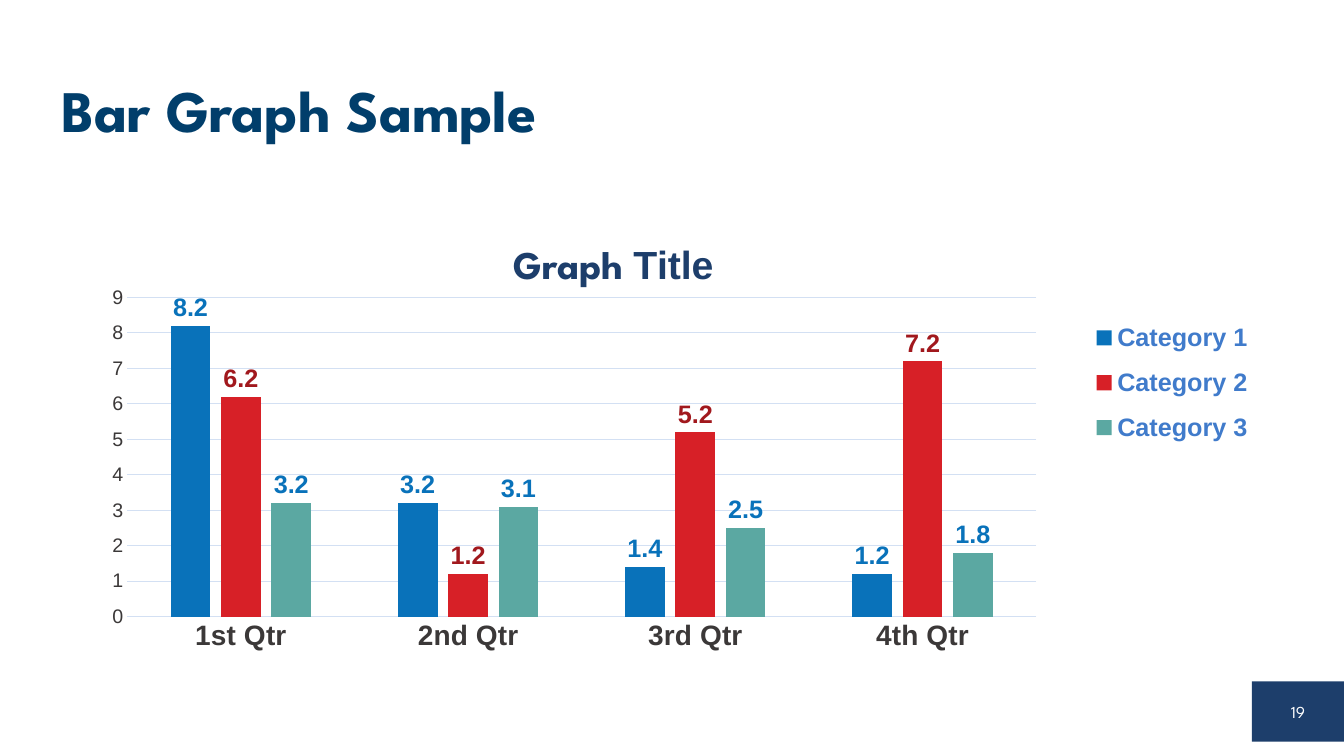
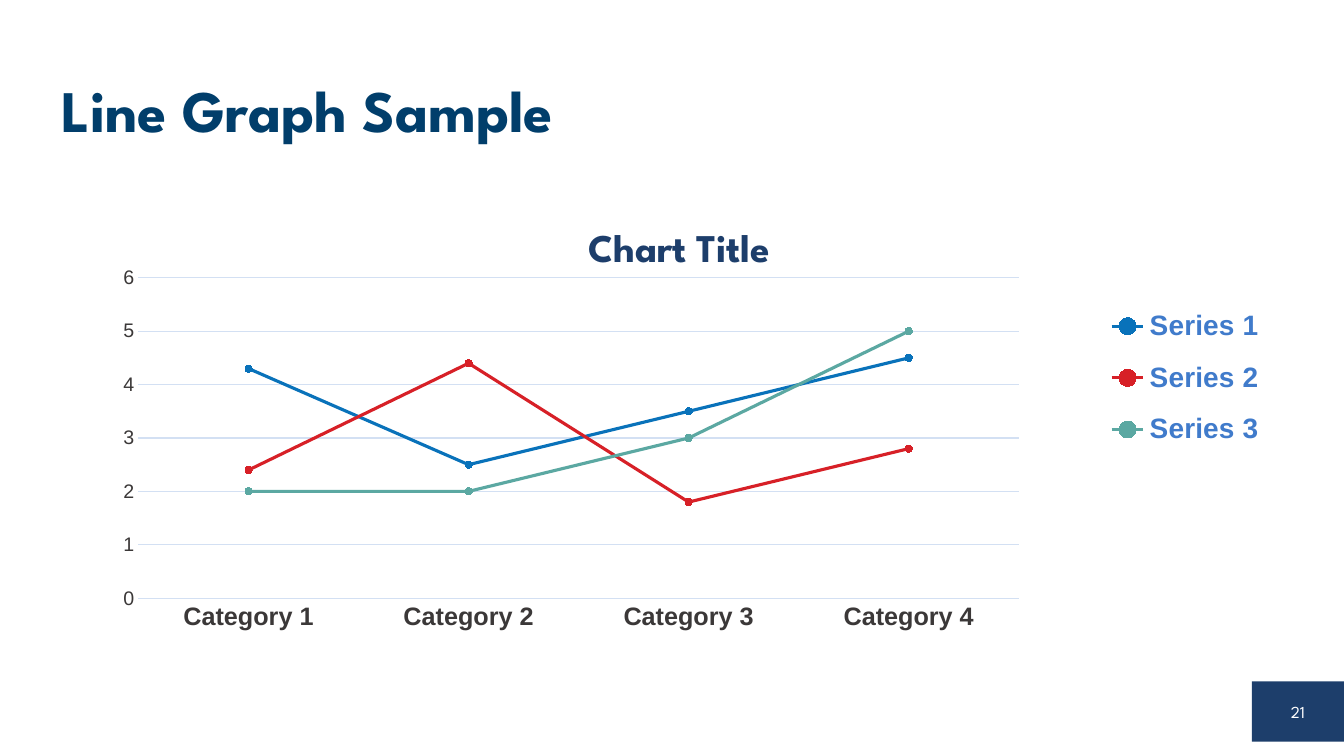
from lxml import etree
from pptx import Presentation
from pptx import util as u
from pptx.chart.data import CategoryChartData
from pptx.dml.color import RGBColor
from pptx.enum import chart as charts, shapes, text
from pptx.oxml.ns import qn

HEADING_FONT, CHART_FONT = "League Spartan", "Arial"
TITLE_BLUE, NAVY, LEGEND_BLUE = "013E6B", "1D3E6B", "407BCB"
GREY, GRID, WHITE = "3B3838", "D3E0F3", "FFFFFF"
BLUE, RED, DARK_RED, TEAL = "0972BA", "D72027", "A1181D", "5BA8A2"
SERIES_COLORS = (BLUE, RED, TEAL)
LABEL_COLORS = (BLUE, DARK_RED, BLUE)


def color(value):
    return RGBColor.from_string(value)


def set_font(font, size, fill, bold=False, name=CHART_FONT):
    font.size, font.bold, font.name = u.Pt(size), bold, name
    font.color.rgb = color(fill)


def write(paragraph, content, align=None, line_spacing=None, **style):
    """Add one formatted run to a paragraph."""
    if align is not None:
        paragraph.alignment = align
    if line_spacing:
        paragraph.line_spacing = line_spacing
    run = paragraph.add_run()
    run.text = content
    set_font(run.font, **style)


def place(element, index, x, y, w=None, h=None, inner=False):
    """Give a chart part a fixed place, in fractions of the chart."""
    for old in element.findall(qn("c:layout")):
        element.remove(old)
    layout = etree.Element(qn("c:layout"))
    manual = etree.SubElement(layout, qn("c:manualLayout"))
    values = [("layoutTarget", "inner" if inner else None),
              ("xMode", "edge"), ("yMode", "edge"),
              ("x", x), ("y", y), ("w", w), ("h", h)]
    for tag, value in values:
        if value is not None:
            etree.SubElement(manual, qn(f"c:{tag}")).set("val", str(value))
    element.insert(index, layout)


class Deck:
    """House style and the current slide."""

    def __init__(self):
        self.presentation = Presentation()
        self.presentation.slide_width = u.Cm(33.87)
        self.presentation.slide_height = u.Cm(19.05)
        self.slide = None

    def new_slide(self, title, number):
        layout = self.presentation.slide_layouts[6]
        self.slide = self.presentation.slides.add_slide(layout)
        self.title(title)
        self.page_number(number)

    def title(self, content):
        box = self.slide.shapes.add_textbox(
            u.Cm(1.3), u.Cm(1.02), u.Cm(31.29), u.Cm(3.68))
        frame = box.text_frame
        frame.word_wrap = True
        frame.vertical_anchor = text.MSO_ANCHOR.MIDDLE
        write(frame.paragraphs[0], content, line_spacing=0.9, size=42,
              fill=TITLE_BLUE, bold=True, name=HEADING_FONT)

    def page_number(self, number):
        shape = self.slide.shapes.add_shape(
            shapes.MSO_SHAPE.RECTANGLE,
            u.Cm(31.55), u.Cm(17.17), u.Cm(2.32), u.Cm(1.52))
        shape.shadow.inherit = False
        shape.fill.solid()
        shape.fill.fore_color.rgb = color(NAVY)
        shape.line.fill.background()
        shape.text_frame.vertical_anchor = text.MSO_ANCHOR.MIDDLE
        write(shape.text_frame.paragraphs[0], str(number),
              align=text.PP_ALIGN.CENTER, size=12, fill=WHITE,
              name=HEADING_FONT)

    def chart(self, kind, categories, series, title_runs, top_value,
              category_size, legend_size, title_at, plot_at, legend_at):
        data = CategoryChartData()
        data.categories = categories
        for name, values in series.items():
            data.add_series(name, values)
        chart = self.slide.shapes.add_chart(
            kind, u.Cm(1.3), u.Cm(5.08), u.Cm(31.29), u.Cm(12.09),
            data).chart
        set_font(chart.font, 10, NAVY)

        # Title
        chart.has_title = True
        paragraph = chart.chart_title.text_frame.paragraphs[0]
        for content, font in title_runs:
            write(paragraph, content, size=28, fill=NAVY, bold=True,
                  name=font)
        place(chart.chart_title._element, 1, *title_at)

        # Legend
        chart.has_legend = True
        legend = chart.legend
        legend.position = charts.XL_LEGEND_POSITION.BOTTOM
        legend.include_in_layout = False
        set_font(legend.font, legend_size, LEGEND_BLUE, bold=True)
        place(legend._element, 1, *legend_at)

        # Axes and plot area
        self.axes(chart, top_value, category_size)
        plot_area = chart._chartSpace.chart.plotArea
        place(plot_area, 0, *plot_at, inner=True)
        chart.plots[0].vary_by_categories = False
        return chart.plots[0]

    def axes(self, chart, top_value, category_size):
        category, value = chart.category_axis, chart.value_axis
        for axis in (category, value):
            axis.major_tick_mark = charts.XL_TICK_MARK.NONE
            axis.minor_tick_mark = charts.XL_TICK_MARK.NONE
        category.has_major_gridlines = False
        value.has_major_gridlines = True
        for line in (category.format.line, value.major_gridlines.format.line):
            line.color.rgb = color(GRID)
            line.width = u.Pt(0.75)
        value.format.line.fill.background()
        value.minimum_scale, value.maximum_scale = 0, top_value
        value.major_unit = 1
        set_font(category.tick_labels.font, category_size, GREY, bold=True)
        set_font(value.tick_labels.font, 14, GREY)

    def bar_chart(self, **options):
        plot = self.chart(charts.XL_CHART_TYPE.COLUMN_CLUSTERED, **options)
        plot.gap_width, plot.overlap = 219, -27
        for series, fill, label in zip(plot.series, SERIES_COLORS,
                                       LABEL_COLORS):
            series.format.fill.solid()
            series.format.fill.fore_color.rgb = color(fill)
            labels = series.data_labels
            labels.show_value = True
            labels.position = charts.XL_LABEL_POSITION.OUTSIDE_END
            set_font(labels.font, 18, label, bold=True)

    def line_chart(self, **options):
        plot = self.chart(charts.XL_CHART_TYPE.LINE_MARKERS, **options)
        for series, fill in zip(plot.series, SERIES_COLORS):
            series.smooth = False
            series.format.line.color.rgb = color(fill)
            series.format.line.width = u.Pt(2.25)
            marker = series.marker
            marker.style, marker.size = charts.XL_MARKER_STYLE.CIRCLE, 5
            marker.format.fill.solid()
            marker.format.fill.fore_color.rgb = color(fill)
            marker.format.line.color.rgb = color(fill)


def main():
    deck = Deck()

    # Bar graph
    deck.new_slide("Bar Graph Sample", 19)
    deck.bar_chart(
        categories=["1st Qtr", "2nd Qtr", "3rd Qtr", "4th Qtr"],
        series={"Category 1": (8.2, 3.2, 1.4, 1.2),
                "Category 2": (6.2, 1.2, 5.2, 7.2),
                "Category 3": (3.2, 3.1, 2.5, 1.8)},
        title_runs=[("Graph ", HEADING_FONT), ("Title", CHART_FONT)],
        top_value=9, category_size=20, legend_size=18,
        title_at=(0.37, 0.08), plot_at=(0.061, 0.2, 0.732, 0.665),
        legend_at=(0.835, 0.22, 0.135, 0.315))

    # Line graph
    deck.new_slide("Line Graph Sample", 21)
    deck.line_chart(
        categories=[f"Category {number}" for number in range(1, 5)],
        series={"Series 1": (4.3, 2.5, 3.5, 4.5),
                "Series 2": (2.4, 4.4, 1.8, 2.8),
                "Series 3": (2, 2, 3, 5)},
        title_runs=[("Chart Title", HEADING_FONT)],
        top_value=6, category_size=18, legend_size=20,
        title_at=(0.427, 0.045), plot_at=(0.07, 0.159, 0.709, 0.668),
        legend_at=(0.848, 0.185, 0.13, 0.365))

    deck.presentation.save("out.pptx")


if __name__ == "__main__":
    main()
